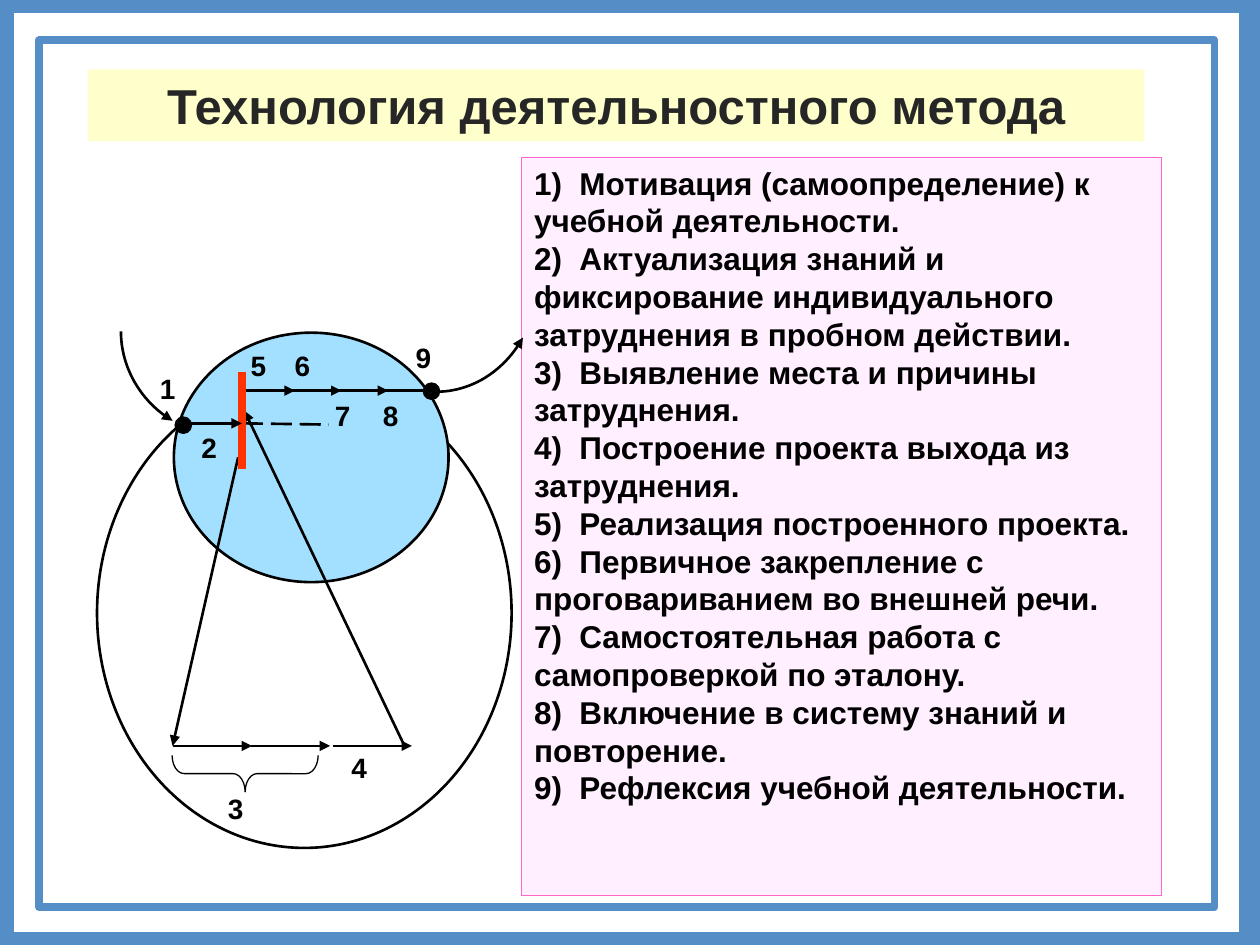
from lxml import etree
from pptx import Presentation
from pptx import util as u
from pptx.dml.color import RGBColor
from pptx.enum import dml, shapes, text
from pptx.oxml.ns import qn

COLORS = {
    "frame": "558EC7", "title_fill": "FFFFCC", "title_text": "262626",
    "list_fill": "FFEFFF", "list_line": "FF66CC", "sky": "A3E0FF",
    "black": "000000", "red": "FF3300",
}
STAGES = [
    "Мотивация (самоопределение) к учебной деятельности.",
    "Актуализация знаний и фиксирование индивидуального затруднения в пробном действии.",
    "Выявление места и причины затруднения.",
    "Построение проекта выхода из затруднения.",
    "Реализация построенного проекта.",
    "Первичное закрепление с проговариванием во внешней речи.",
    "Самостоятельная работа с самопроверкой по эталону.",
    "Включение в систему знаний и повторение.",
    "Рефлексия учебной деятельности.",
]
LABELS = {
    "5": (1.89, 2.72), "6": (2.24, 2.72), "9": (3.2, 2.65),
    "8": (2.94, 3.11), "3": (1.71, 6.23), "4": (2.69, 5.91),
    "7": (2.56, 3.11), "1": (1.17, 2.9), "2": (1.5, 3.37),
}


def rgb(name):
    return RGBColor.from_string(COLORS[name])


def bezier(p0, p1, p2, p3, steps=24):
    """Points along a cubic curve."""
    for i in range(steps + 1):
        t = i / steps
        s = 1 - t
        yield tuple(s**3 * a + 3 * s * s * t * b + 3 * s * t * t * c + t**3 * d
                    for a, b, c, d in zip(p0, p1, p2, p3))


class Builder:
    font = {"name": "Arial", "bold": True}

    def __init__(self, slide):
        self.slide = slide

    def add_words(self, p, words, size, color="black"):
        r = p.add_run()
        r.text = words
        for key, value in {**self.font, "size": u.Pt(size)}.items():
            setattr(r.font, key, value)
        r.font.color.rgb = rgb(color)

    def frame_text(self, sp, anchor=text.MSO_ANCHOR.TOP):
        tf = sp.text_frame
        options = {"word_wrap": True, "vertical_anchor": anchor,
                   "auto_size": text.MSO_AUTO_SIZE.NONE}
        for key, value in options.items():
            setattr(tf, key, value)
        return tf

    def stroke(self, sp, color="black", width=1.5, arrow=False, dash=None):
        sp.line.color.rgb = rgb(color)
        sp.line.width = u.Pt(width)
        if dash:
            sp.line.dash_style = dash
        if arrow:
            ln = sp._element.spPr.find(qn("a:ln"))
            etree.SubElement(ln, qn("a:tailEnd"), type="triangle")

    def title(self, words, box):
        sp = self.slide.shapes.title
        sp.left, sp.top, sp.width, sp.height = map(u.Inches, box)
        sp.fill.solid()
        sp.fill.fore_color.rgb = rgb("title_fill")
        p = self.frame_text(sp, text.MSO_ANCHOR.MIDDLE).paragraphs[0]
        p.alignment = text.PP_ALIGN.CENTER
        self.add_words(p, words, 28, "title_text")

    def shape(self, kind, box, fill=None, line="black", width=1.5):
        sp = self.slide.shapes.add_shape(kind, *map(u.Inches, box))
        sp.shadow.inherit = False
        if fill:
            sp.fill.solid()
            sp.fill.fore_color.rgb = rgb(fill)
        else:
            sp.fill.background()
        self.stroke(sp, line, width)
        return sp

    def line(self, start, end, **style):
        sp = self.slide.shapes.add_connector(
            shapes.MSO_CONNECTOR.STRAIGHT, *map(u.Inches, start + end))
        self.stroke(sp, **style)
        etree.SubElement(sp._element.spPr, qn("a:effectLst"))

    def curve(self, *controls):
        first, *rest = [(u.Inches(x), u.Inches(y)) for x, y in bezier(*controls)]
        outline = self.slide.shapes.build_freeform(*first)
        outline.add_line_segments(rest, close=False)
        sp = outline.convert_to_shape()
        sp.shadow.inherit = False
        sp.fill.background()
        self.stroke(sp, arrow=True)

    def label(self, words, at):
        sp = self.slide.shapes.add_textbox(*map(u.Inches, at + (0.66, 0.59)))
        self.add_words(self.frame_text(sp).paragraphs[0], words, 16)

    def numbered(self, sp, items):
        tf = self.frame_text(sp)
        for i, item in enumerate(items, 1):
            p = tf.paragraphs[0] if i == 1 else tf.add_paragraph()
            p.alignment = text.PP_ALIGN.LEFT
            tabs = etree.SubElement(p._p.get_or_add_pPr(), qn("a:tabLst"))
            etree.SubElement(tabs, qn("a:tab"), pos=str(u.Inches(0.36)), algn="l")
            self.add_words(p, f"{i})\t{item}", 18)


def main():
    prs = Presentation()
    prs.slide_width, prs.slide_height = u.Inches(10), u.Inches(7.5)
    s = Builder(prs.slides.add_slide(prs.slide_layouts[5]))
    kinds = shapes.MSO_SHAPE

    # Double frame and title
    s.shape(kinds.RECTANGLE, (0.01, 0, 9.93, 7.5), line="frame", width=15)
    s.shape(kinds.RECTANGLE, (0.31, 0.32, 9.33, 6.88), line="frame", width=4.5)
    s.title("Технология деятельностного метода", (0.7, 0.55, 8.38, 0.57))

    # List of stages
    panel = s.shape(kinds.RECTANGLE, (4.14, 1.25, 5.08, 5.86),
                    "list_fill", "list_line", 0.75)
    s.numbered(panel, STAGES)

    # Large and small circles
    s.shape(kinds.OVAL, (0.77, 3, 3.29, 3.73))
    s.shape(kinds.OVAL, (1.38, 2.64, 2.18, 1.98), "sky")

    # Entry and exit curves
    s.curve((0.96, 2.63), (0.96, 2.92), (1.12, 3.19), (1.37, 3.34))
    s.curve((3.46, 3.11), (3.74, 3.11), (4, 2.95), (4.15, 2.68))

    # Upper chain of steps
    for i in range(4):
        x = 1.92 + 0.37 * i
        s.line((x, 3.1), (x + 0.42, 3.1), arrow=True)
    s.line((1.92, 3.36), (2.61, 3.37), dash=dml.MSO_LINE.LONG_DASH)

    # Lower chain of steps and the way down and back
    for x in (1.37, 1.99, 2.64):
        s.line((x, 5.92), (x + 0.63, 5.92), arrow=True)
    s.line((1.89, 3.63), (1.37, 5.92), arrow=True)
    s.line((3.22, 5.94), (1.94, 3.26), arrow=True)
    brace = s.shape(kinds.RIGHT_BRACE, (1.8, 5.56, 0.29, 1.16), width=0.75)
    brace.rotation = 90
    brace.adjustments[0] = 0.33

    # Step numbers
    for words, at in LABELS.items():
        s.label(words, at)

    # Start and end dots, barrier
    for x, y in ((1.39, 3.31), (3.36, 3.04)):
        s.shape(kinds.OVAL, (x, y, 0.13, 0.13), "black", width=0.75)
    s.line((1.92, 2.95), (1.92, 3.72), color="red", width=4.5)
    s.line((1.51, 3.36), (1.92, 3.36), arrow=True)

    prs.save("out.pptx")


if __name__ == "__main__":
    main()
